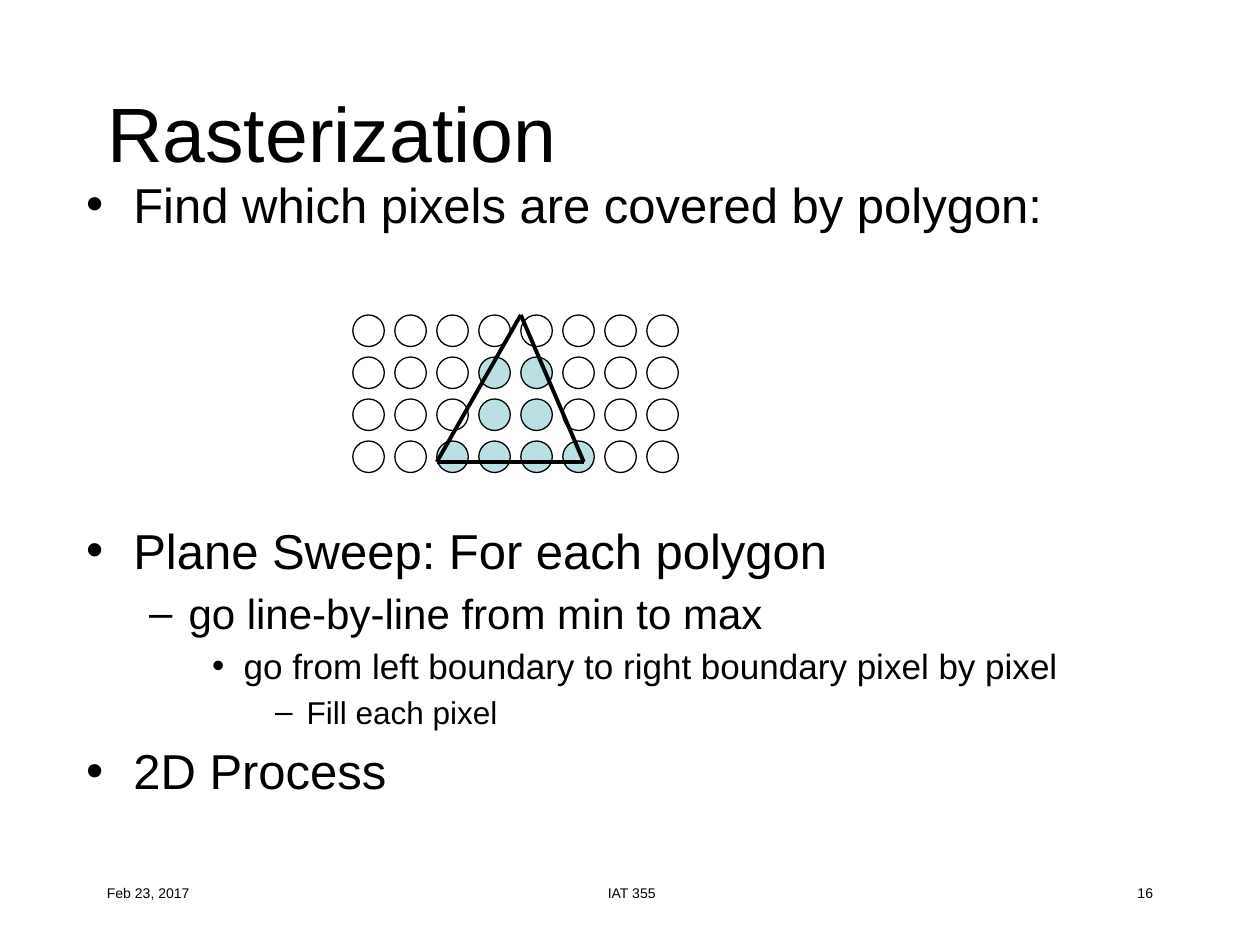
from itertools import pairwise

from lxml import etree
from pptx import Presentation
from pptx.dml.color import RGBColor
from pptx.enum import shapes, text
from pptx.oxml.ns import qn
from pptx.util import Pt

COLORS = {"ink": "000000", "covered": "BBE0E3"}
LEVEL_SIZES = [28, 24, 20, 18]

GRID_LEFT, GRID_TOP = 201.6, 180
PITCH, DIAMETER = 24, 18
COLUMNS = 8
# Columns covered by the triangle, one entry for each pixel row
COVERED = [(), (3, 4), (3, 4), (2, 3, 4, 5)]
TRIANGLE = [(48, 84), (96, 0), (132, 84)]


def rgb(name):
    return RGBColor.from_string(COLORS[name])


def write(paragraph, content, size, align=text.PP_ALIGN.LEFT, level=0, before=None):
    paragraph.alignment = align
    paragraph.level = level
    if before is not None:
        paragraph.space_before = Pt(before)
    run = paragraph.add_run()
    run.text = content
    run.font.name = "Arial"
    run.font.size = Pt(size)
    run.font.color.rgb = rgb("ink")


class SlideBuilder:
    def __init__(self, slide):
        self.slide = slide

    def place(self, shape, left, top, width, height):
        shape.left, shape.top = Pt(left), Pt(top)
        shape.width, shape.height = Pt(width), Pt(height)
        shape.text_frame.auto_size = text.MSO_AUTO_SIZE.NONE
        return shape.text_frame

    def title(self, content, *box):
        frame = self.place(self.slide.shapes.title, *box)
        frame.vertical_anchor = text.MSO_ANCHOR.MIDDLE
        write(frame.paragraphs[0], content, 44)

    def bullets(self, items, *box):
        """Fill the body from (level, text, space before) items."""
        frame = self.place(self.slide.placeholders[1], *box)
        for index, (level, content, before) in enumerate(items):
            paragraph = frame.add_paragraph() if index else frame.paragraphs[0]
            write(paragraph, content, LEVEL_SIZES[level], level=level, before=before)

    def footer(self, content, left, width, align):
        box = self.slide.shapes.add_textbox(Pt(left), Pt(492), Pt(width), Pt(36))
        frame = box.text_frame
        frame.word_wrap = True
        frame.vertical_anchor = text.MSO_ANCHOR.MIDDLE
        write(frame.paragraphs[0], content, 8, align)

    def pixel(self, left, top, covered):
        circle = self.slide.shapes.add_shape(
            shapes.MSO_SHAPE.OVAL, Pt(left), Pt(top), Pt(DIAMETER), Pt(DIAMETER))
        circle.shadow.inherit = False
        circle.line.color.rgb = rgb("ink")
        circle.line.width = Pt(0.75)
        if covered:
            circle.fill.solid()
            circle.fill.fore_color.rgb = rgb("covered")
        else:
            circle.fill.background()

    def edge(self, start, end):
        line = self.slide.shapes.add_connector(
            shapes.MSO_CONNECTOR.STRAIGHT, *(Pt(value) for value in (*start, *end)))
        line.line.color.rgb = rgb("ink")
        line.line.width = Pt(2.25)
        etree.SubElement(line._element.spPr, qn("a:effectLst"))


def main():
    presentation = Presentation()
    presentation.slide_width, presentation.slide_height = Pt(720), Pt(540)
    slide = presentation.slides.add_slide(presentation.slide_layouts[1])
    builder = SlideBuilder(slide)

    builder.footer("Feb 23, 2017", 54, 150, text.PP_ALIGN.LEFT)
    builder.footer("IAT 355", 247, 228, text.PP_ALIGN.CENTER)
    builder.footer("16", 516, 150, text.PP_ALIGN.RIGHT)
    builder.title("Rasterization", 54, 48, 612, 54)
    builder.bullets([
        (0, "Find which pixels are covered by polygon:", None),
        (0, "Plane Sweep: For each polygon", 164),  # leaves room for the pixel grid
        (1, "go line-by-line from min to max", None),
        (2, "go from left boundary to right boundary pixel by pixel", None),
        (3, "Fill each pixel", None),
        (0, "2D Process", None),
    ], 42, 96, 660, 390)

    for row, covered in enumerate(COVERED):
        for column in range(COLUMNS):
            builder.pixel(GRID_LEFT + column * PITCH, GRID_TOP + row * PITCH,
                          column in covered)

    corners = [(GRID_LEFT + x, GRID_TOP + y) for x, y in TRIANGLE]
    for start, end in pairwise(corners + corners[:1]):
        builder.edge(start, end)

    presentation.save("out.pptx")


if __name__ == "__main__":
    main()
